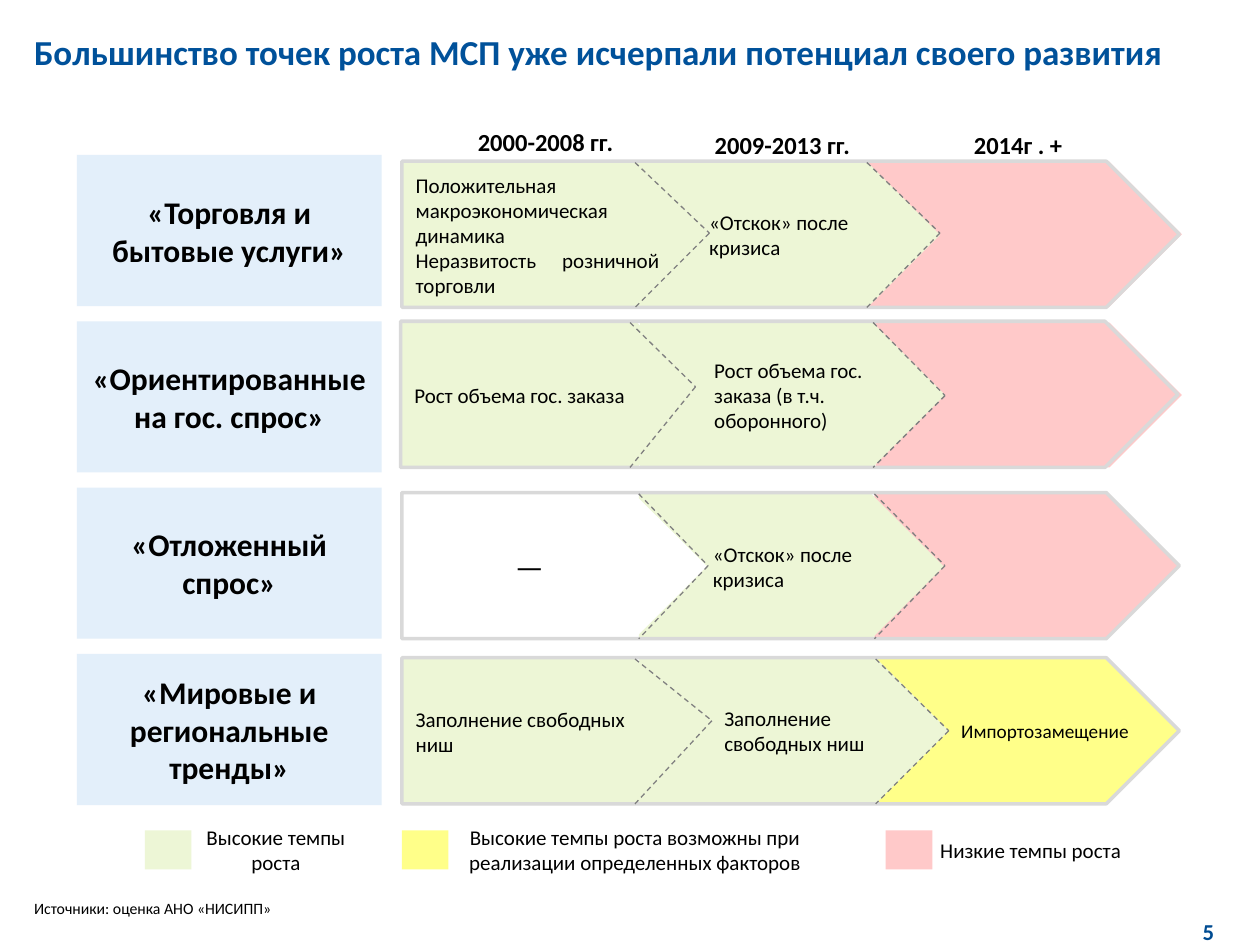
from lxml import etree
from pptx import Presentation
from pptx.dml.color import RGBColor as Rgb
from pptx.enum.dml import MSO_LINE as Dash
from pptx.enum.shapes import MSO_CONNECTOR as Conn, MSO_SHAPE as Geo
from pptx.enum.text import MSO_ANCHOR as Anchor, PP_ALIGN as Align
from pptx.oxml.ns import qn
from pptx.util import Inches, Pt

HUES = {
    "green": "EDF6D6", "yellow": "FFFF89", "pink": "FFC9C9", "white": "FFFFFF",
    "label": "E3EFFA", "frame": "D9D9D9", "dash": "808080",
    "black": "000000", "title": "00519A", "page": "004C92",
}

HEADS = [(3.39, 0.86, "2000-2008 гг."), (5.27, 0.88, "2009-2013 гг."),
         (7.14, 0.88, "2014г . +")]

ROWS = [
    ("«Торговля и бытовые услуги»", (3.19, 1.28), [
        ((6.88, 1.28, 2.5, 1.16), "pink", [], {}),
        ((5.04, 1.28, 2.42, 1.17), "green", ["«Отскок» после кризиса"], {"left": 0.49}),
        ((3.2, 1.29, 2.42, 1.15), "green",
         ["Положительная макроэкономическая динамика",
          "Неразвитость розничной торговли"], {"align": Align.JUSTIFY}),
    ], [(5.04, 5.63, 1.85), (6.88, 7.46, 1.85)]),
    ("«Ориентированные на гос. спрос»", (3.18, 2.55), [
        ((6.95, 2.56, 2.43, 1.15), "pink", [], {}),
        ((5.08, 2.55, 2.42, 1.17), "green",
         ["Рост объема гос. заказа (в т.ч. оборонного)"], {"left": 0.49}),
        ((3.19, 2.56, 2.44, 1.15), "green", ["Рост объема гос. заказа"], {}),
    ], [(5, 5.52, 3.07), (6.93, 7.5, 3.14)]),
    ("«Отложенный спрос»", (3.19, 3.91), [
        ((6.94, 3.91, 2.42, 1.16), "pink", [], {}),
        ((5.07, 3.92, 2.42, 1.15), "green", ["«Отскок» после кризиса"], {"left": 0.49}),
        ((3.19, 3.92, 2.42, 1.15), "white", [], {}),
    ], [(5.07, 5.62, 4.49), (6.94, 7.5, 4.49)]),
    ("«Мировые и региональные тренды»", (3.19, 5.22), [
        ((6.94, 5.22, 2.42, 1.16), "yellow", ["Импортозамещение"],
         {"left": 0.59, "size": 11}),
        ((5.07, 5.22, 2.46, 1.16), "green", ["Заполнение свободных ниш"], {"left": 0.58}),
        ((3.2, 5.23, 2.42, 1.16), "green", ["Заполнение свободных ниш"], {}),
    ], [(5.04, 5.65, 5.72), (6.95, 7.53, 5.8)]),
]

KEYS = [
    (1.15, "green", (1.37, 1.64), "Высокие темпы роста"),
    (3.19, "yellow", (3.52, 3.04),
     "Высокие темпы роста возможны при реализации определенных факторов"),
    (7.03, "pink", (7.24, 1.88), "Низкие темпы роста"),
]


class Deck:
    font = "Calibri"

    def __init__(self, slide):
        self.slide = slide

    def hue(self, name):
        return Rgb.from_string(HUES[name])

    def label(self, shape, lines, size=12, bold=False, color="black",
              align=Align.LEFT, anchor=Anchor.MIDDLE, left=0, first=0, pad=True):
        frame = shape.text_frame
        frame.word_wrap = True
        frame.vertical_anchor = anchor
        if not pad:
            frame.margin_left = frame.margin_right = 0
            frame.margin_top = frame.margin_bottom = 0
        for i, line in enumerate(lines):
            para = frame.paragraphs[0] if i == 0 else frame.add_paragraph()
            para.text = line
            para.alignment = align
            if left:
                props = para._p.get_or_add_pPr()
                props.set("marL", str(Inches(left)))
                props.set("indent", str(Inches(first)))
            font = para.font
            font.name, font.size, font.bold = self.font, Pt(size), bold
            font.color.rgb = self.hue(color)

    def text(self, box, line, **style):
        shape = self.slide.shapes.add_textbox(*map(Inches, box))
        self.label(shape, [line], **style)

    def shape(self, geo, box, fill=None, lines=(), **style):
        shape = self.slide.shapes.add_shape(geo, *map(Inches, box))
        shape.shadow.inherit = False
        if fill:
            shape.fill.solid()
            shape.fill.fore_color.rgb = self.hue(fill)
            shape.line.fill.background()
        else:
            shape.fill.background()
            shape.line.color.rgb = self.hue("frame")
            shape.line.width = Pt(2)
        if lines:
            self.label(shape, lines, **style)

    def line(self, start, end):
        line = self.slide.shapes.add_connector(
            Conn.STRAIGHT, *map(Inches, (*start, *end)))
        line.line.color.rgb = self.hue("dash")
        line.line.width = Pt(0.75)
        line.line.dash_style = Dash.DASH
        etree.SubElement(line._element.spPr, qn("a:effectLst"))

    def edge(self, back, tip, mid, top, base):
        self.line((back, top), (tip, mid))
        self.line((tip, mid), (back, base))


def main():
    show = Presentation()
    show.slide_width, show.slide_height = Inches(10), Inches(7.5)
    deck = Deck(show.slides.add_slide(show.slide_layouts[6]))

    deck.text((0.27, 0.24, 9.45, 1.02),
              "Большинство точек роста МСП уже исчерпали потенциал своего развития",
              size=20, bold=True, color="title", anchor=Anchor.TOP, pad=False)

    for i, (name, (x, y), steps, edges) in enumerate(ROWS):
        for box, fill, lines, style in steps:
            deck.shape(Geo.PENTAGON, box, fill, lines, **style)
        deck.shape(Geo.PENTAGON, (x, y, 6.17, 1.16))
        deck.shape(Geo.RECTANGLE, (0.61, 1.23 + 1.32 * i, 2.42, 1.2), "label",
                   [name], size=18, bold=True, align=Align.CENTER)
        for back, tip, mid in edges:
            deck.edge(back, tip, mid, y + 0.01, y + 1.16)

    deck.text((3.2, 3.91, 2.42, 1.16), "—", size=18, left=0.69, first=0.1)
    for x, y, head in HEADS:
        deck.text((x, y, 1.88, 0.53), head, size=14, bold=True, align=Align.CENTER)

    for x, fill, (left, wide), note in KEYS:
        deck.text((left, 6.59, wide, 0.31), note, align=Align.CENTER)
        deck.shape(Geo.RECTANGLE, (x, 6.59, 0.37, 0.31), fill)

    deck.text((0.27, 6.93, 9.45, 0.35), "Источники: оценка АНО «НИСИПП»",
              size=9, anchor=Anchor.BOTTOM, pad=False)
    deck.text((9.46, 7.28, 0.26, 0.22), "5", size=13, bold=True, color="page",
              align=Align.CENTER, pad=False)
    show.save("out.pptx")


if __name__ == "__main__":
    main()
